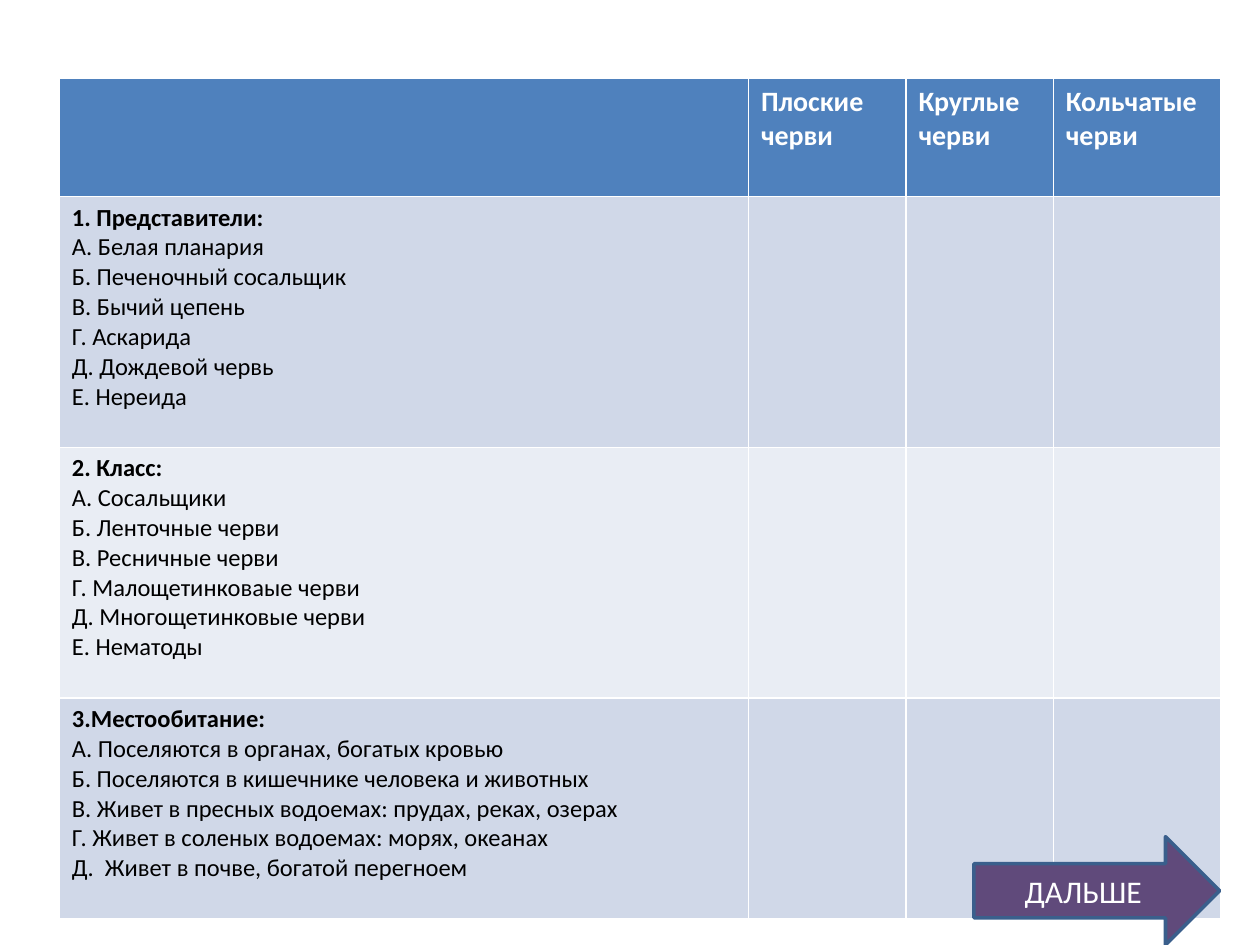
"""Build a slide with a worm classification table and a "next" arrow."""
from dataclasses import dataclass

from pptx import Presentation
from pptx.dml.color import RGBColor
from pptx.enum.shapes import MSO_SHAPE as Shape
from pptx.enum.text import MSO_ANCHOR as Anchor, PP_ALIGN as Align
from pptx.util import Inches, Pt


@dataclass(frozen=True)
class Theme:
    font: str = "Calibri"
    header_size: int = 16
    body_size: int = 14
    button_size: int = 18
    header_fill: str = "4F81BD"
    bands: tuple = ("D0D8E8", "E9EDF4")
    light: str = "FFFFFF"
    dark: str = "000000"
    button_fill: str = "604A7B"
    button_line: str = "3A5F8C"


theme = Theme()


def format_text(paragraph, size, color, bold=False):
    paragraph.font.name = theme.font
    paragraph.font.size = Pt(size)
    paragraph.font.bold = bold
    paragraph.font.color.rgb = RGBColor.from_string(color)


def paint(area, color):
    area.fill.solid()
    area.fill.fore_color.rgb = RGBColor.from_string(color)


worm_types = ["Плоские", "Круглые", "Кольчатые"]
topics = [
    ["1. Представители:", "А. Белая планария", "Б. Печеночный сосальщик",
     "В. Бычий цепень", "Г. Аскарида", "Д. Дождевой червь", "Е. Нереида"],
    ["2. Класс:", "А. Сосальщики", "Б. Ленточные черви", "В. Ресничные черви",
     "Г. Малощетинковаые черви", "Д. Многощетинковые черви", "Е. Нематоды"],
    ["3.Местообитание:", "А. Поселяются в органах, богатых кровью",
     "Б. Поселяются в кишечнике человека и животных",
     "В. Живет в пресных водоемах: прудах, реках, озерах",
     "Г. Живет в соленых водоемах: морях, океанах",
     "Д.  Живет в почве, богатой перегноем"],
]
column_widths = [5.47, 1.25, 1.17, 1.33]
row_heights = [0.94, 1.99, 1.99, 1.75]

prs = Presentation()
prs.slide_width = Inches(10)
prs.slide_height = Inches(7.5)
slide = prs.slides.add_slide(prs.slide_layouts[6])

worms = slide.shapes.add_table(
    len(row_heights), len(column_widths), Inches(0.47), Inches(0.62),
    Inches(sum(column_widths)), Inches(sum(row_heights))).table
for column, width in zip(worms.columns, column_widths):
    column.width = Inches(width)
for index, (row, height) in enumerate(zip(worms.rows, row_heights)):
    row.height = Inches(height)
    for cell in row.cells:
        paint(cell, theme.bands[(index - 1) % 2] if index else theme.header_fill)

for index, worm_type in enumerate(worm_types, start=1):
    heading = worms.cell(0, index).text_frame
    heading.text = f"{worm_type}\nчерви"
    for paragraph in heading.paragraphs:
        format_text(paragraph, theme.header_size, theme.light, bold=True)

for index, lines in enumerate(topics, start=1):
    topic = worms.cell(index, 0).text_frame
    topic.text = "\n".join(lines)
    for position, paragraph in enumerate(topic.paragraphs):
        format_text(paragraph, theme.body_size, theme.dark, bold=position == 0)

next_button = slide.shapes.add_shape(
    Shape.RIGHT_ARROW, Inches(7.73), Inches(6.64), Inches(1.95), Inches(0.86))
next_button.shadow.inherit = False
paint(next_button, theme.button_fill)
next_button.line.color.rgb = RGBColor.from_string(theme.button_line)
next_button.line.width = Pt(2)
next_button.text_frame.text = "ДАЛЬШЕ"
next_button.text_frame.vertical_anchor = Anchor.MIDDLE
next_label = next_button.text_frame.paragraphs[0]
next_label.alignment = Align.CENTER
format_text(next_label, theme.button_size, theme.light)

prs.save("out.pptx")
